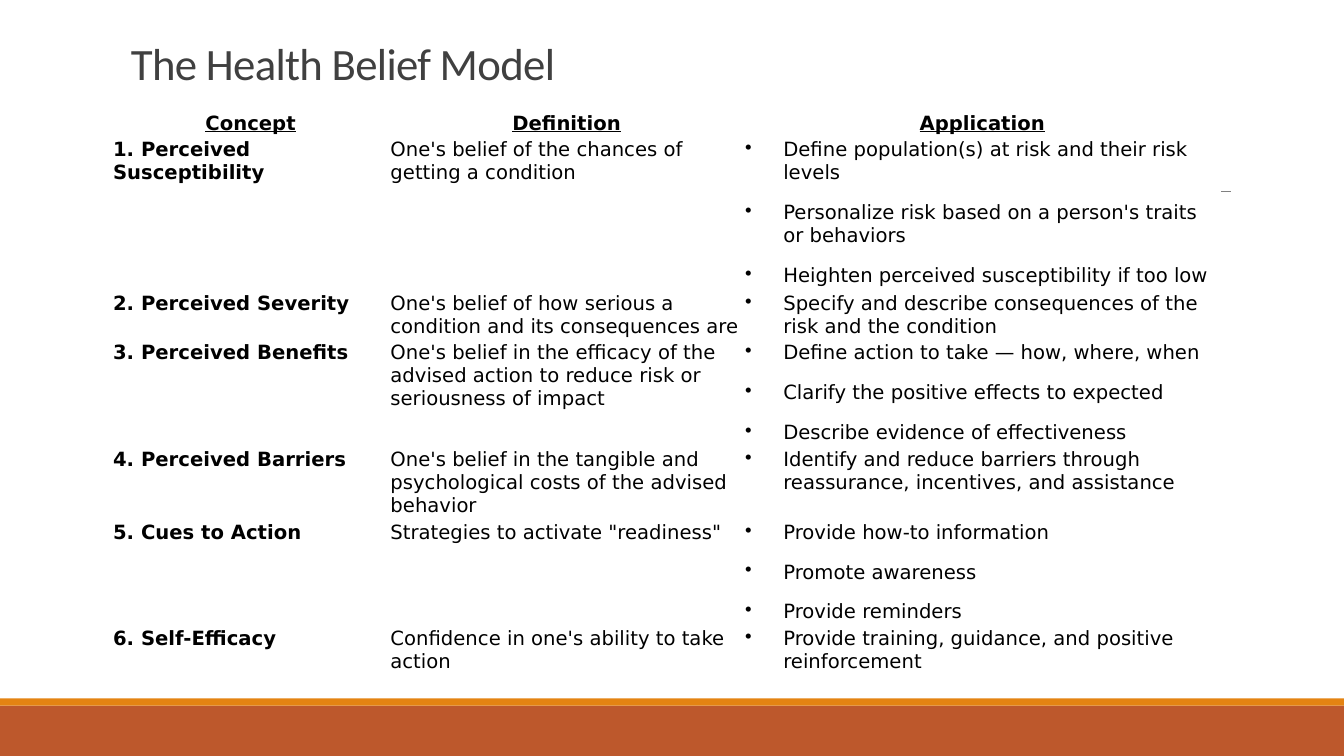
"""Build the Health Belief Model table slide."""
from pptx import Presentation
from pptx import util as u
from pptx.dml.color import RGBColor
from pptx.enum import shapes, text
from pptx.oxml.ns import qn
from lxml import etree

WHITE = RGBColor(0xFF, 0xFF, 0xFF)
BLACK = RGBColor(0, 0, 0)
TITLE_GREY = RGBColor(0x40, 0x40, 0x40)
RULE_GREY = RGBColor(0x80, 0x80, 0x80)
RUST = RGBColor(0xBD, 0x58, 0x2C)
ORANGE = RGBColor(0xE4, 0x83, 0x12)

SLIDE_WIDTH, SLIDE_HEIGHT = 33.87, 19.05
COLUMN_WIDTHS = (6.99, 8.94, 12.01)
ROW_HEIGHTS = (0.62, 3.8, 1.2, 2.65, 1.78, 2.65, 1.2)
HEADINGS = ("Concept", "Definition", "Application")
CONCEPTS = (
    ("1. Perceived Susceptibility",
     "One's belief of the chances of getting a condition",
     ("Define population(s) at risk and their risk levels",
      "Personalize risk based on a person's traits or behaviors",
      "Heighten perceived susceptibility if too low")),
    ("2. Perceived Severity",
     "One's belief of how serious a condition and its consequences are",
     ("Specify and describe consequences of the risk and the condition",)),
    ("3. Perceived Benefits",
     "One's belief in the efficacy of the advised action to reduce risk or "
     "seriousness of impact",
     ("Define action to take — how, where, when",
      "Clarify the positive effects to expected",
      "Describe evidence of effectiveness")),
    ("4. Perceived Barriers",
     "One's belief in the tangible and psychological costs of the advised behavior",
     ("Identify and reduce barriers through reassurance, incentives, and assistance",)),
    ("5. Cues to Action",
     "Strategies to activate \"readiness\"",
     ("Provide how-to information", "Promote awareness", "Provide reminders")),
    ("6. Self-Efficacy",
     "Confidence in one's ability to take action",
     ("Provide training, guidance, and positive reinforcement",)),
)


def add_span(para, words, size, font, color, bold=False, underline=False):
    """Append one formatted run to a paragraph."""
    span = para.add_run()
    span.text = words
    span.font.size = u.Pt(size)
    span.font.name = font
    span.font.color.rgb = color
    span.font.bold = bold
    span.font.underline = underline
    return span


def add_band(page, left, top, width, height, color):
    """Draw a plain filled strip."""
    band = page.shapes.add_shape(shapes.MSO_SHAPE.RECTANGLE, u.Cm(left),
                                 u.Cm(top), u.Cm(width), u.Cm(height))
    band.shadow.inherit = False
    band.fill.solid()
    band.fill.fore_color.rgb = color
    band.line.fill.background()


def add_footer(page, left, top, width, height):
    """Draw the rust footer with its thin orange upper edge."""
    edge = 0.18
    add_band(page, left, top + edge, width, height - edge, RUST)
    add_band(page, left, top, width, edge, ORANGE)


def add_rule(page, left, top, width):
    """Draw the thin horizontal grey rule."""
    rule = page.shapes.add_connector(shapes.MSO_CONNECTOR.STRAIGHT, u.Cm(left),
                                     u.Cm(top), u.Cm(left + width), u.Cm(top))
    rule.line.color.rgb = RULE_GREY
    rule.line.width = u.Pt(0.5)
    etree.SubElement(rule.element.spPr, qn("a:effectLst"))


def add_title(page, left, top, width, height):
    """Write the slide title at the bottom of its box."""
    box = page.shapes.add_textbox(u.Cm(left), u.Cm(top), u.Cm(width), u.Cm(height))
    frame = box.text_frame
    frame.word_wrap = True
    frame.vertical_anchor = text.MSO_ANCHOR.BOTTOM
    para = frame.paragraphs[0]
    para.line_spacing = 0.85
    span = add_span(para, "The Health Belief Model", 32, "Calibri", TITLE_GREY)
    span.font.element.set("spc", "-50") if hasattr(span.font, "element") else \
        span._r.get_or_add_rPr().set("spc", "-50")


def add_bullet(para):
    """Give a paragraph a hanging round bullet."""
    properties = para._p.get_or_add_pPr()
    indent = u.Cm(0.96)
    properties.set("marL", str(indent))
    properties.set("indent", str(-indent))
    etree.SubElement(properties, qn("a:buChar")).set("char", "•")


def fill_cell(cell, lines, heading=False, bold=False, bulleted=False):
    """Write lines into a white table cell."""
    cell.fill.solid()
    cell.fill.fore_color.rgb = WHITE
    cell.margin_left = cell.margin_right = u.Cm(0.03)
    cell.margin_top = cell.margin_bottom = u.Cm(0.03)
    cell.vertical_anchor = text.MSO_ANCHOR.MIDDLE if heading else text.MSO_ANCHOR.TOP
    frame = cell.text_frame
    for index, line in enumerate(lines):
        para = frame.add_paragraph() if index else frame.paragraphs[0]
        para.alignment = text.PP_ALIGN.CENTER if heading else text.PP_ALIGN.LEFT
        if index < len(lines) - 1:
            para.space_after = u.Pt(12)
        if bulleted:
            add_bullet(para)
        add_span(para, line, 14, "DejaVu Sans", BLACK, bold, heading)


def add_concept_table(page, left, top):
    """Place the table of concepts, definitions and applications."""
    frame = page.shapes.add_table(len(ROW_HEIGHTS), len(COLUMN_WIDTHS),
                                  u.Cm(left), u.Cm(top), u.Cm(sum(COLUMN_WIDTHS)),
                                  u.Cm(sum(ROW_HEIGHTS)))
    table = frame.table
    table.horz_banding = False
    for column, width in zip(table.columns, COLUMN_WIDTHS):
        column.width = u.Cm(width)
    for row, height in zip(table.rows, ROW_HEIGHTS):
        row.height = u.Cm(height)
    for column, heading in enumerate(HEADINGS):
        fill_cell(table.cell(0, column), [heading], heading=True, bold=True)
    for row, (concept, definition, actions) in enumerate(CONCEPTS, 1):
        fill_cell(table.cell(row, 0), [concept], bold=True)
        fill_cell(table.cell(row, 1), [definition])
        fill_cell(table.cell(row, 2), actions, bulleted=True)


def build_model_slide(deck):
    """Add the Health Belief Model slide to the deck."""
    page = deck.slides.add_slide(deck.slide_layouts[6])
    footer_height = 1.45
    add_footer(page, 0, SLIDE_HEIGHT - footer_height, SLIDE_WIDTH, footer_height)
    add_rule(page, 3.33, 4.82, 27.68)
    add_title(page, 3.05, 0.2, 27.94, 2.18)
    add_concept_table(page, 2.82, 2.8)


def main():
    """Create and save the deck."""
    deck = Presentation()
    deck.slide_width = u.Cm(SLIDE_WIDTH)
    deck.slide_height = u.Cm(SLIDE_HEIGHT)
    build_model_slide(deck)
    deck.save("out.pptx")


if __name__ == "__main__":
    main()
